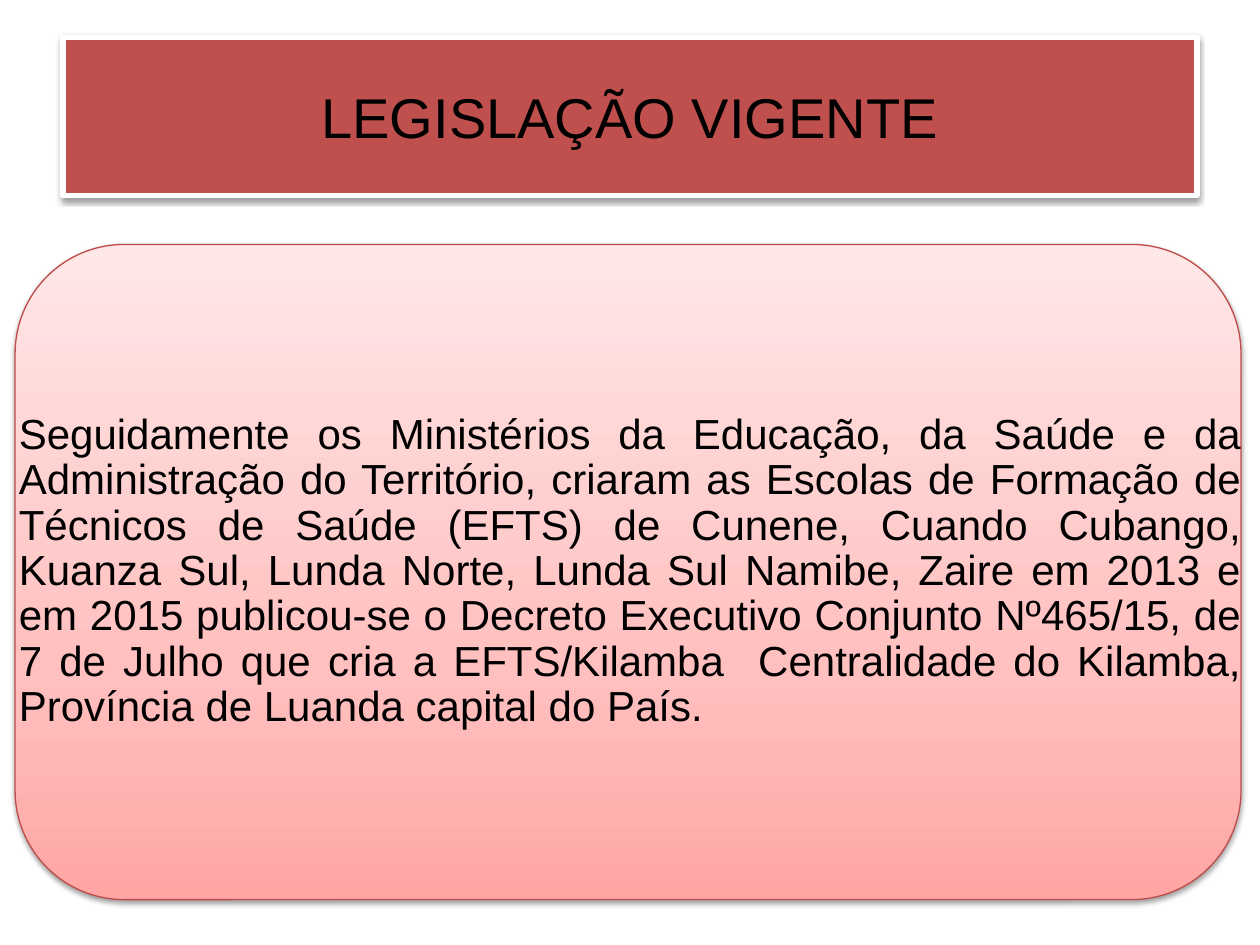
from lxml import etree
from pptx import Presentation
from pptx.dml.color import RGBColor
from pptx.enum import shapes, text
from pptx.oxml import parse_xml
from pptx.oxml.ns import nsdecls
from pptx.util import Inches, Pt

TITLE = "LEGISLAÇÃO VIGENTE"
BODY = (
    "Seguidamente os Ministérios da Educação, da Saúde e da Administração do "
    "Território, criaram as Escolas de Formação de Técnicos de Saúde (EFTS) de "
    "Cunene, Cuando Cubango, Kuanza Sul, Lunda Norte, Lunda Sul Namibe, Zaire "
    "em 2013 e em 2015 publicou-se o Decreto Executivo Conjunto Nº465/15, de "
    "7 de Julho que cria a EFTS/Kilamba  Centralidade do Kilamba, Província de "
    "Luanda capital do País."
)
STOPS = [(0, "FFA6A5"), (35, "FFC0BF"), (100, "FFE7E7")]


def color(code):
    return RGBColor.from_string(code)


def write(shape, words, size=24, align=text.PP_ALIGN.LEFT, space=1.0,
          font="Arial", ink="000000"):
    frame = shape.text_frame
    frame.word_wrap = True
    frame.vertical_anchor = text.MSO_ANCHOR.MIDDLE
    para = frame.paragraphs[0]
    para.alignment = align
    para.line_spacing = space
    run = para.add_run()
    run.text = words
    run.font.name = font
    run.font.size = Pt(size)
    run.font.color.rgb = color(ink)


def outline(shape, code, width):
    shape.line.color.rgb = color(code)
    shape.line.width = Pt(width)


def shade(shape):
    """Add a soft shadow below; call after fill and line are set."""
    shape.element.spPr.append(parse_xml(
        f'<a:effectLst {nsdecls("a")}>'
        f'<a:outerShdw blurRad="{Pt(3.1)}" dist="{Pt(1.6)}" dir="5400000" '
        'rotWithShape="0"><a:srgbClr val="000000"><a:alpha val="38000"/>'
        '</a:srgbClr></a:outerShdw></a:effectLst>'))


def blend(shape, stops):
    """Fill with a gradient that runs from bottom to top."""
    shape.fill.gradient()
    shape.fill.gradient_angle = 90
    items = "".join(
        f'<a:gs pos="{pos * 1000}"><a:srgbClr val="{code}"/></a:gs>'
        for pos, code in stops)
    old = shape.element.spPr.find(".//{*}gsLst")
    old.getparent().replace(old, etree.fromstring(
        f'<a:gsLst {nsdecls("a")}>{items}</a:gsLst>'))


def header(slide, left, top, width, height):
    title = slide.shapes.title
    title.left, title.top = left, top
    title.width, title.height = width, height
    title.fill.solid()
    title.fill.fore_color.rgb = color("C0504D")
    outline(title, "FFFFFF", 3)
    shade(title)
    write(title, TITLE, size=32, align=text.PP_ALIGN.CENTER)


def panel(slide, *box):
    group = slide.shapes.add_group_shape()
    card = group.shapes.add_shape(shapes.MSO_SHAPE.ROUNDED_RECTANGLE, *box)
    blend(card, STOPS)
    outline(card, "BF4C48", 0.75)
    shade(card)
    label = group.shapes.add_textbox(*box)
    frame = label.text_frame
    frame.margin_left, frame.margin_right = Inches(0.03), 0
    frame.margin_top = frame.margin_bottom = Inches(0.02)
    write(label, BODY, align=text.PP_ALIGN.JUSTIFY, space=0.9)


def main():
    deck = Presentation()
    deck.slide_width, deck.slide_height = Inches(10), Inches(7.5)
    slide = deck.slides.add_slide(deck.slide_layouts[5])
    header(slide, Inches(0.5), Inches(0.3), Inches(9), Inches(1.25))
    panel(slide, Inches(0.12), Inches(1.94), Inches(9.73), Inches(5.2))
    deck.save("out.pptx")


if __name__ == "__main__":
    main()
